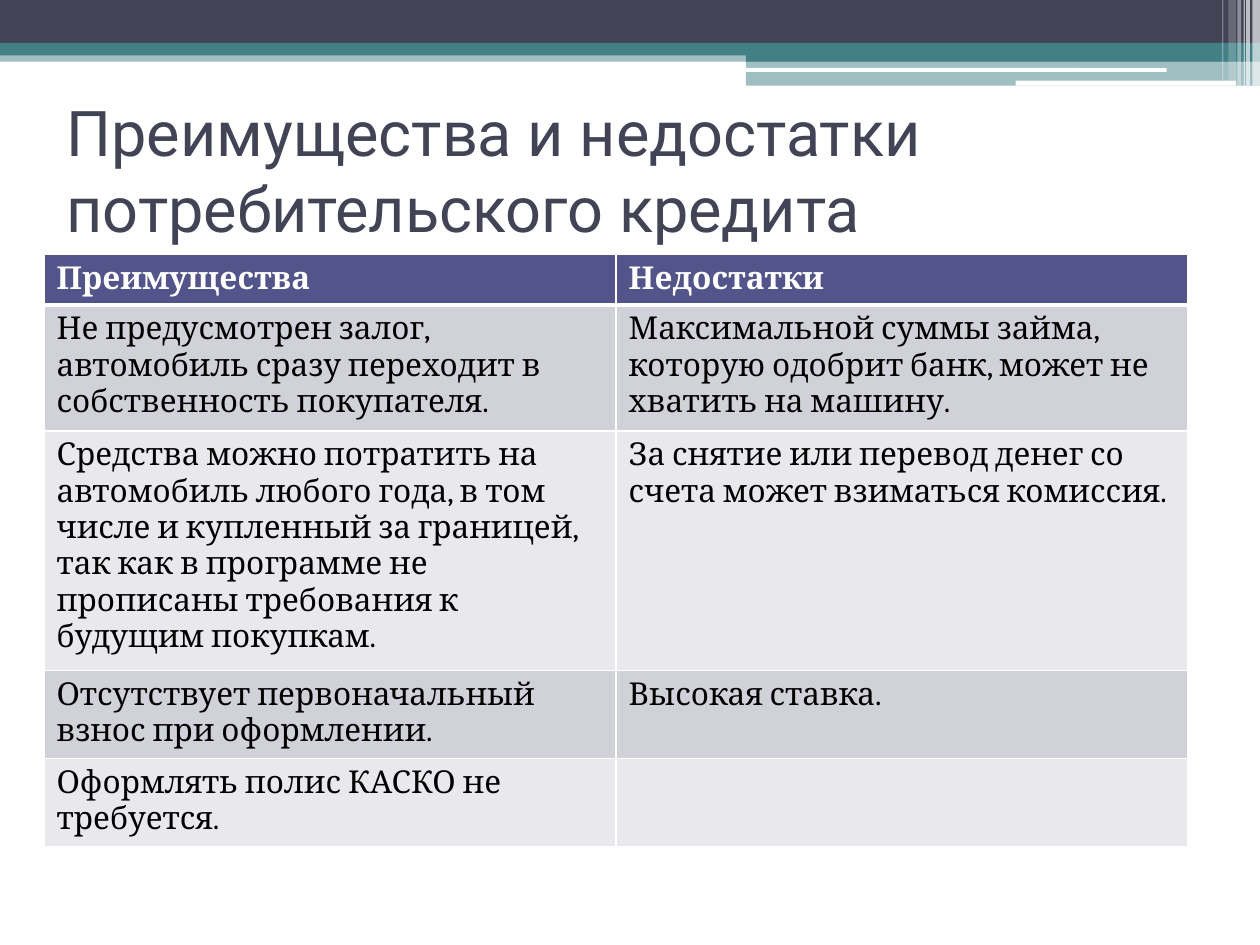
import pptx
import pptx.dml.color
import pptx.enum.shapes
import pptx.enum.text
import pptx.oxml.ns
import pptx.util
from dataclasses import dataclass
from lxml import etree

Inches = pptx.util.Inches
Pt = pptx.util.Pt
RECTANGLE = pptx.enum.shapes.MSO_SHAPE.RECTANGLE
ROUNDED = pptx.enum.shapes.MSO_SHAPE.ROUNDED_RECTANGLE
MIDDLE = pptx.enum.text.MSO_ANCHOR.MIDDLE


@dataclass(frozen=True)
class Theme:
    dark: str = "424456"
    teal: str = "438086"
    white: str = "FFFFFF"
    black: str = "000000"
    header: str = "53548A"
    bands: tuple = ("D1D1DA", "E9E9ED")
    title_font: str = "Roboto"
    body_font: str = "Cambria"
    title_size: int = 36
    body_size: int = 18
    thin_border: int = 1
    thick_border: int = 3


def rgb(color):
    return pptx.dml.color.RGBColor.from_string(color)


def add_xml(parent, tag, **attributes):
    return etree.SubElement(parent, pptx.oxml.ns.qn(tag), attributes)


def write_text(frame, text, *, font, size, color, bold=False):
    paragraph = frame.paragraphs[0]
    run = paragraph.add_run()
    run.text = text
    run.font.name = font
    run.font.size = Pt(size)
    run.font.bold = bold
    run.font.color.rgb = rgb(color)


class SlideBuilder:
    def __init__(self, slide, theme):
        self.slide = slide
        self.theme = theme

    def bar(self, left, top, width, height, color, opacity=100, kind=RECTANGLE):
        shape = self.slide.shapes.add_shape(
            kind, Inches(left), Inches(top), Inches(width), Inches(height))
        shape.shadow.inherit = False
        shape.line.fill.background()
        shape.fill.solid()
        shape.fill.fore_color.rgb = rgb(color)
        if opacity < 100:
            color_element = next(shape.fill._xPr.iter(pptx.oxml.ns.qn("a:srgbClr")))
            add_xml(color_element, "a:alpha", val=str(opacity * 1000))

    def title(self, text, left, top, width, height):
        box = self.slide.shapes.add_textbox(
            Inches(left), Inches(top), Inches(width), Inches(height))
        box.text_frame.word_wrap = True
        box.text_frame.vertical_anchor = MIDDLE
        write_text(box.text_frame, text, font=self.theme.title_font,
                   size=self.theme.title_size, color=self.theme.dark)

    def borders(self, cell, top, bottom):
        properties = cell._tc.get_or_add_tcPr()
        thin = self.theme.thin_border
        for side, width in zip("LRTB", (thin, thin, top, bottom)):
            line = add_xml(properties, f"a:ln{side}", w=str(Pt(width)))
            add_xml(add_xml(line, "a:solidFill"), "a:srgbClr", val=self.theme.white)

    def table(self, rows, row_heights, left, top, width):
        theme = self.theme
        table = self.slide.shapes.add_table(
            len(rows), len(rows[0]), Inches(left), Inches(top),
            Inches(width), Inches(sum(row_heights))).table
        for row_index, (texts, height) in enumerate(zip(rows, row_heights)):
            table.rows[row_index].height = Inches(height)
            is_header = row_index == 0
            fill = theme.header if is_header else theme.bands[(row_index - 1) % 2]
            for column_index, text in enumerate(texts):
                cell = table.cell(row_index, column_index)
                self.borders(
                    cell,
                    top=theme.thick_border if row_index == 1 else theme.thin_border,
                    bottom=theme.thick_border if is_header else theme.thin_border)
                cell.fill.solid()
                cell.fill.fore_color.rgb = rgb(fill)
                if text:
                    write_text(cell.text_frame, text, font=theme.body_font,
                               size=theme.body_size, bold=is_header,
                               color=theme.white if is_header else theme.black)


def main():
    presentation = pptx.Presentation()
    presentation.slide_width = Inches(10)
    presentation.slide_height = Inches(7.5)
    theme = Theme()
    builder = SlideBuilder(
        presentation.slides.add_slide(presentation.slide_layouts[6]), theme)

    # Header bands
    builder.bar(0, 0.4, 10, 0.09, theme.teal, 50)
    builder.bar(0, 0, 10, 0.34, theme.dark)
    builder.bar(0, 0.34, 10, 0.1, theme.teal)
    builder.bar(5.92, 0.39, 4.08, 0.1, theme.teal)
    builder.bar(5.92, 0.48, 4.08, 0.2, theme.teal, 50)

    # White strips over the bands
    builder.bar(5.91, 0.54, 3.35, 0.03, theme.white, kind=ROUNDED)
    builder.bar(8.06, 0.64, 1.75, 0.04, theme.white, kind=ROUNDED)

    # Translucent stripes at the right edge: left, width, height, opacity
    for left, width, height, opacity in (
            (9.94, 0.06, 0.68, 65), (9.89, 0.03, 0.68, 65),
            (9.87, 0.01, 0.68, 60), (9.82, 0.03, 0.68, 40),
            (9.75, 0.06, 0.64, 20), (9.7, 0.01, 0.64, 30)):
        builder.bar(left, 0, width, height, theme.white, opacity)

    # Title
    builder.title("Преимущества и недостатки потребительского кредита",
                  0.43, 0.76, 9, 1.17)

    # Comparison table
    rows = [
        ("Преимущества", "Недостатки"),
        ("Не предусмотрен залог, автомобиль сразу переходит в собственность покупателя.",
         "Максимальной суммы займа, которую одобрит банк, может не хватить на машину."),
        ("Средства можно потратить на автомобиль любого года, в том числе и купленный "
         "за границей, так как в программе не прописаны требования к будущим покупкам.",
         "За снятие или перевод денег со счета может взиматься комиссия."),
        ("Отсутствует первоначальный взнос при оформлении.", "Высокая ставка."),
        ("Оформлять полис КАСКО не требуется.", ""),
    ]
    builder.table(rows, (0.35, 0.88, 1.41, 0.61, 0.61), 0.35, 2.02, 9.08)

    presentation.save("out.pptx")


if __name__ == "__main__":
    main()
